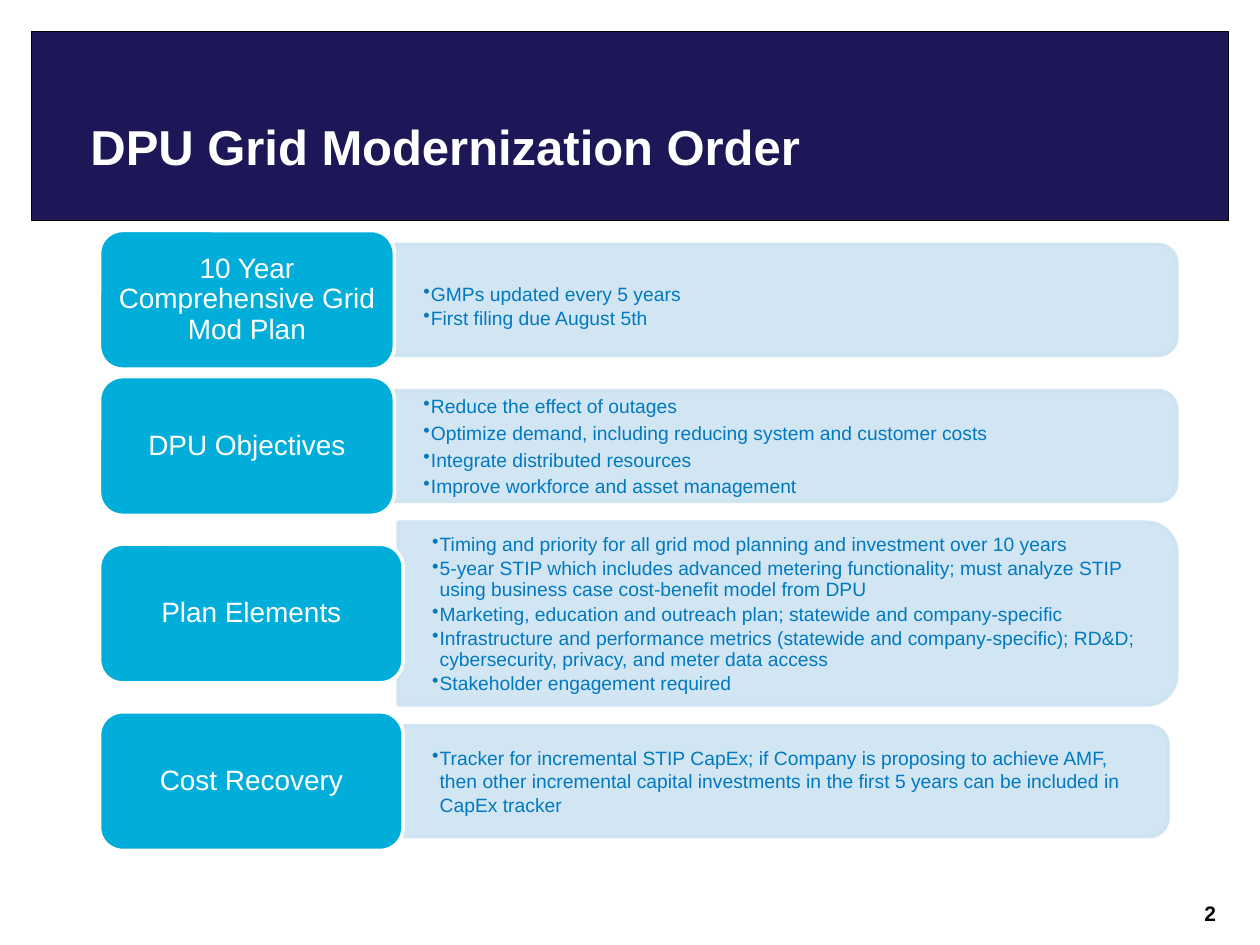
from lxml import etree
from pptx import Presentation
from pptx.dml.color import RGBColor
from pptx.enum.shapes import MSO_SHAPE as Shape
from pptx.enum.text import MSO_ANCHOR as Anchor, PP_ALIGN as Align
from pptx.oxml.ns import qn
from pptx.util import Inches, Pt

COLORS = {
    "navy": "1D1757", "cyan": "00AED9", "pale": "CCE3F1",
    "blue": "0079C1", "white": "FFFFFF", "black": "000000",
}
FONT = "Arial"
TILE_LEFT, TILE_HEIGHT = 0.79, 1.1
OVERLAP = 0.04  # how far each panel reaches under its tile

# heading, centre height, tile width, panel width, panel height,
# line spacing of the first and of the later bullets, bullets
ROWS = [
    ("10 Year Comprehensive Grid Mod Plan", 2.38, 2.34, 6.25, 0.88, 1.5, 0.9, [
        "GMPs updated every 5 years",
        "First filing due August 5th",
    ]),
    ("DPU Objectives", 3.54, 2.34, 6.25, 0.88, 1.0, 1.0, [
        "Reduce the effect of outages",
        "Optimize demand, including reducing system and customer costs",
        "Integrate distributed resources",
        "Improve workforce and asset management",
    ]),
    ("Plan Elements", 4.87, 2.41, 6.18, 1.45, 1.0, 0.9, [
        "Timing and priority for all grid mod planning and investment over 10 years",
        "5-year STIP which includes advanced metering functionality; must analyze "
        "STIP using business case cost-benefit model from DPU",
        "Marketing, education and outreach plan; statewide and company-specific",
        "Infrastructure and performance metrics (statewide and company-specific); "
        "RD&D; cybersecurity, privacy, and meter data access",
        "Stakeholder engagement required",
    ]),
    ("Cost Recovery", 6.2, 2.41, 6.11, 0.88, 1.0, 1.0, [
        "Tracker for incremental STIP CapEx; if Company is proposing to achieve "
        "AMF, then other incremental capital investments in the first 5 years can "
        "be included in CapEx tracker",
    ]),
]


def rgb(name):
    return RGBColor.from_string(COLORS[name])


def add_bullet(paragraph):
    properties = paragraph._p.get_or_add_pPr()
    properties.set("marL", str(Inches(0.06)))
    properties.set("indent", str(Inches(-0.06)))
    etree.SubElement(properties, qn("a:buChar"), char="•")


def write(frame, lines, size, color, bold=False, align=Align.LEFT,
          anchor=Anchor.TOP, insets=(0.1, 0.05), bullets=False,
          first_spacing=1.0, spacing=1.0, after=0):
    """Fill a text frame with one paragraph for each line."""
    frame.word_wrap = True
    frame.vertical_anchor = anchor
    frame.margin_left = frame.margin_right = Inches(insets[0])
    frame.margin_top = frame.margin_bottom = Inches(insets[1])
    for index, line in enumerate(lines):
        paragraph = frame.paragraphs[0] if index == 0 else frame.add_paragraph()
        if bullets:
            add_bullet(paragraph)
        paragraph.alignment = align
        paragraph.line_spacing = spacing if index else first_spacing
        paragraph.space_after = Pt(after)
        run = paragraph.add_run()
        run.text = line
        font = run.font
        font.name, font.size, font.bold = FONT, Pt(size), bold
        font.color.rgb = rgb(color)


def add_box(slide, kind, left, top, width, height, fill, line, line_width):
    shape = slide.shapes.add_shape(
        kind, Inches(left), Inches(top), Inches(width), Inches(height))
    shape.shadow.inherit = False
    shape.fill.solid()
    shape.fill.fore_color.rgb = rgb(fill)
    shape.line.color.rgb = rgb(line)
    shape.line.width = Pt(line_width)
    return shape


def add_text(slide, left, top, width, height, lines, **text_format):
    box = slide.shapes.add_textbox(
        Inches(left), Inches(top), Inches(width), Inches(height))
    write(box.text_frame, lines, **text_format)


def add_panel(slide, left, middle, width, height):
    """Pale panel, turned so that its rounded corners face right."""
    panel = add_box(slide, Shape.ROUND_2_SAME_RECTANGLE,
                    left + (width - height) / 2, middle - width / 2,
                    height, width, "pale", "pale", 2)
    panel.rotation = 90
    for color in panel._element.spPr.iter(qn("a:srgbClr")):
        etree.SubElement(color, qn("a:alpha"), val="90000")


def add_row(slide, heading, middle, tile_width, panel_width, panel_height,
            first_spacing, spacing, bullets):
    panel_left = TILE_LEFT + tile_width - OVERLAP
    add_panel(slide, panel_left, middle, panel_width, panel_height)
    text_height = panel_height - 0.09
    add_text(slide, panel_left, middle - text_height / 2,
             panel_width - 0.04, text_height, bullets,
             size=11, color="blue", anchor=Anchor.MIDDLE, insets=(0.27, 0.14),
             bullets=True, first_spacing=first_spacing, spacing=spacing, after=2)
    tile = add_box(slide, Shape.ROUNDED_RECTANGLE, TILE_LEFT,
                   middle - TILE_HEIGHT / 2, tile_width, TILE_HEIGHT,
                   "cyan", "white", 2)
    write(tile.text_frame, [heading], size=16, color="white",
          align=Align.CENTER, anchor=Anchor.MIDDLE, insets=(0.07, 0.03),
          first_spacing=0.9)


def main():
    presentation = Presentation()
    presentation.slide_width, presentation.slide_height = Inches(10), Inches(7.5)
    slide = presentation.slides.add_slide(presentation.slide_layouts[6])

    # Title band
    add_box(slide, Shape.RECTANGLE, 0.25, 0.25, 9.5, 1.5, "navy", "black", 0.75)
    add_text(slide, 0.62, 0.87, 6.54, 0.57, ["DPU Grid Modernization Order"],
             size=28, color="white", bold=True, anchor=Anchor.BOTTOM)

    # Headed rows
    for row in ROWS:
        add_row(slide, *row)

    # Page number
    add_text(slide, 7.42, 7.1, 2.33, 0.4, ["2"],
             size=12, color="black", bold=True, align=Align.RIGHT)

    presentation.save("out.pptx")


if __name__ == "__main__":
    main()
